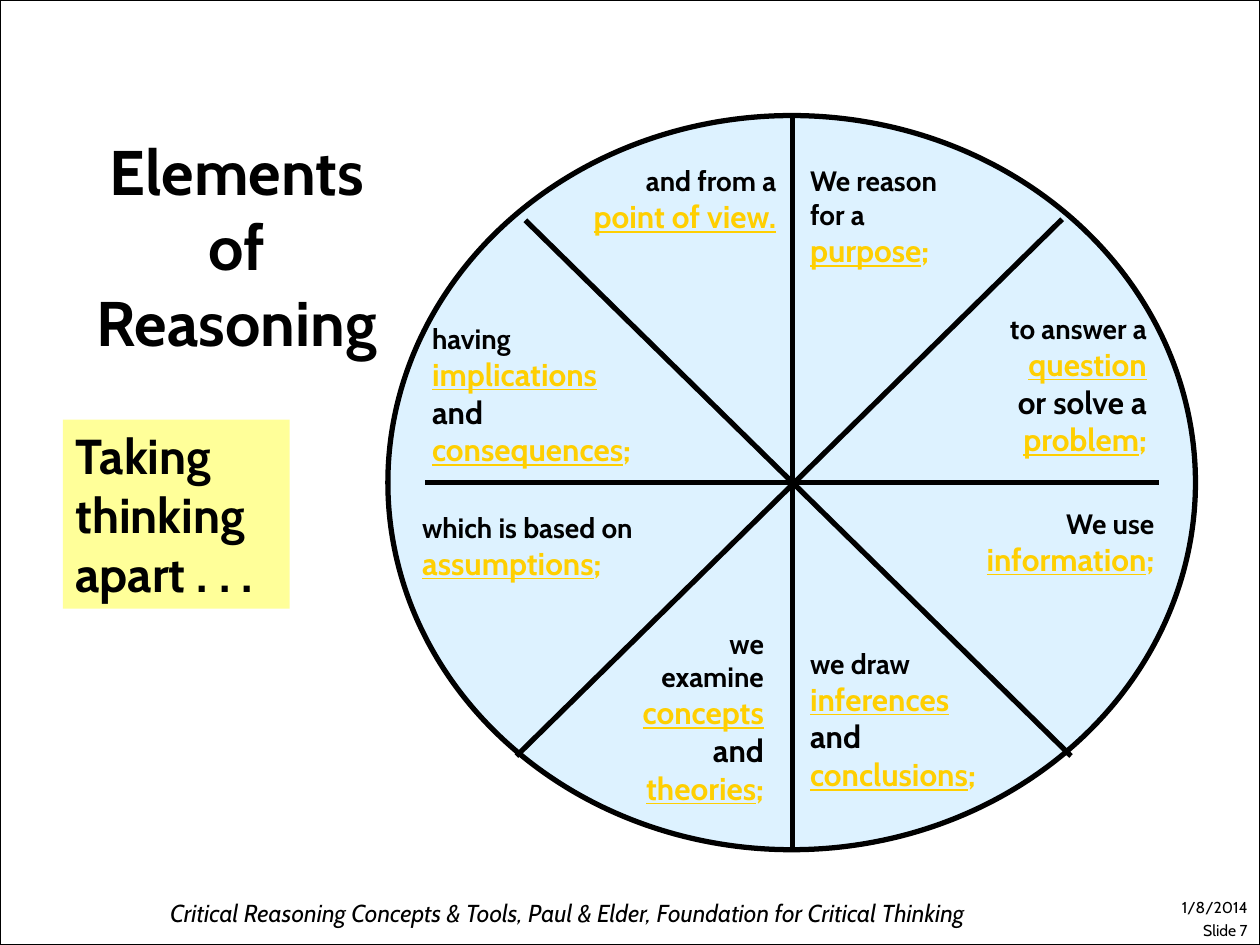
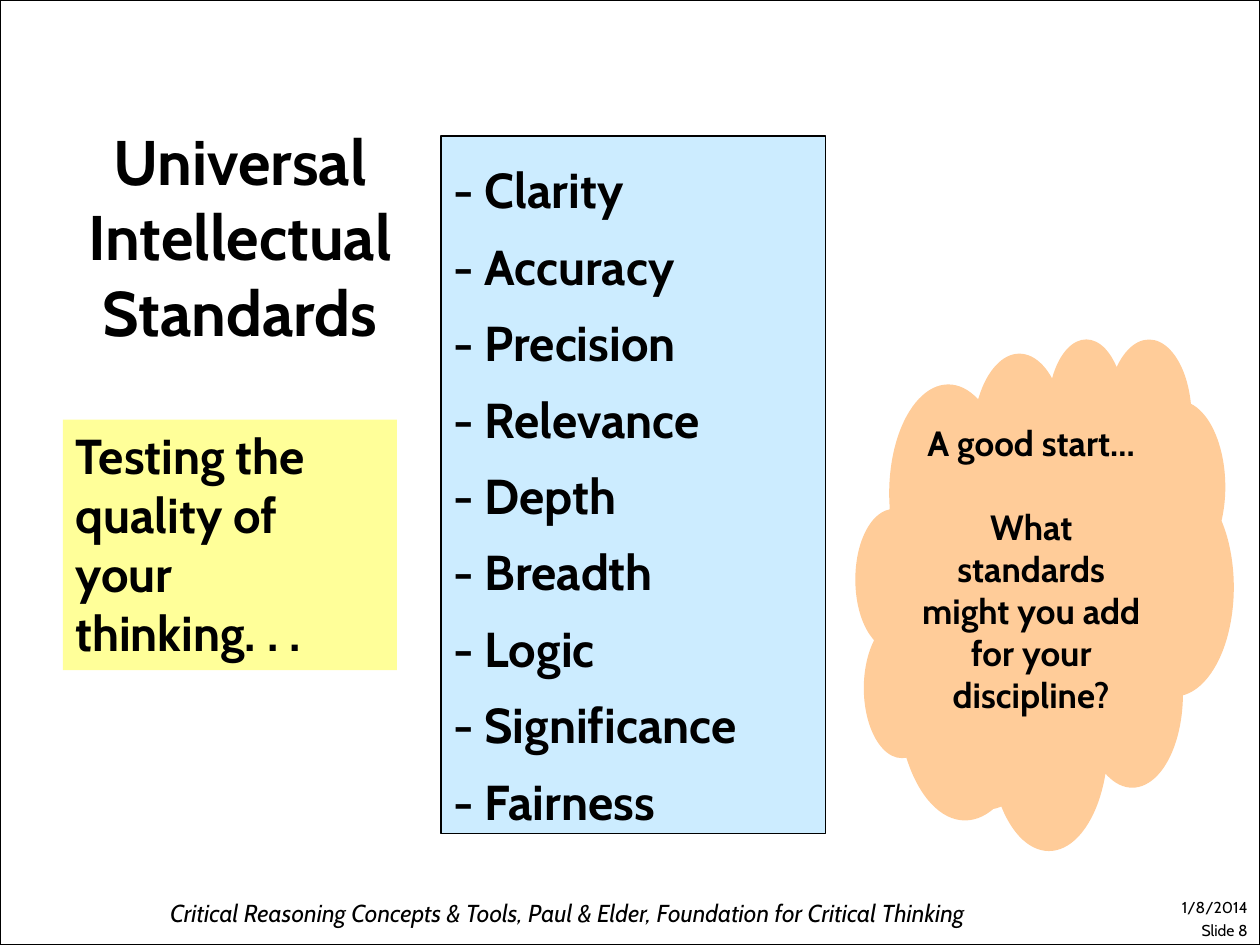
import dataclasses

import pptx
import pptx.dml.color
import pptx.enum.shapes
import pptx.enum.text
import pptx.oxml.ns
import pptx.util
from lxml import etree

Cm = pptx.util.Cm
Pt = pptx.util.Pt
Align = pptx.enum.text.PP_ALIGN
Anchor = pptx.enum.text.MSO_ANCHOR
Preset = pptx.enum.shapes.MSO_SHAPE


@dataclasses.dataclass(frozen=True)
class Theme:
    font: str = "Cabin"
    # Colours
    ink: str = "000000"
    keyword: str = "FFCF01"
    wheel: str = "DDF2FF"
    panel: str = "CCECFF"
    note: str = "FFFF99"
    cloud: str = "FFCC99"
    # Type sizes
    title: int = 36
    large: int = 28
    prompt: int = 20
    key: int = 18
    lead: int = 16
    citation: int = 14
    small: int = 9
    # Line widths
    thin: float = 0.75
    thick: float = 3


PAGE_WIDTH, PAGE_HEIGHT = 25.4, 19.05
CITATION = ("Critical Reasoning Concepts & Tools, Paul & Elder, "
            "Foundation for Critical Thinking")
DATE = "1/8/2014"

# Wheel geometry in centimetres
CENTRE_X, CENTRE_Y = 15.97, 9.73
SPOKE = 7.4
SPOKES = [
    (CENTRE_X, CENTRE_Y - SPOKE, CENTRE_X, CENTRE_Y + SPOKE),
    (CENTRE_X - SPOKE, CENTRE_Y, CENTRE_X + SPOKE, CENTRE_Y),
    (21.41, 4.42, 10.41, 15.24),
    (10.59, 4.44, 21.59, 15.24),
]

# Wheel sectors: place, alignment, lines as (role, text)
SECTORS = [
    ((16.08, 3.18, 3.66, 2.49), Align.LEFT,
     [("lead", "We reason"), ("lead", "for a"), ("key", "purpose;")]),
    ((19.48, 6.15, 3.89, 3.33), Align.RIGHT,
     [("lead", "to answer a"), ("key", "question"),
      ("join", "or solve a"), ("key", "problem;")]),
    ((19.0, 10.08, 4.52, 1.7), Align.RIGHT,
     [("lead", "We use"), ("key", "information;")]),
    ((16.08, 12.9, 4.5, 3.25), Align.LEFT,
     [("lead", "we draw"), ("key", "inferences"),
      ("join", "and"), ("key", "conclusions;")]),
    ((12.27, 12.5, 3.38, 3.94), Align.RIGHT,
     [("lead", "we"), ("lead", "examine"), ("key", "concepts"),
      ("join", "and"), ("key", "theories;")]),
    ((8.26, 10.16, 5.61, 1.7), Align.LEFT,
     [("lead", "which is based on"), ("key", "assumptions;")]),
    ((8.46, 6.35, 5.26, 3.25), Align.LEFT,
     [("lead", "having"), ("key", "implications"),
      ("join", "and"), ("key", "consequences;")]),
    ((11.0, 3.18, 4.9, 1.7), Align.RIGHT,
     [("lead", "and from a"), ("key", "point of view.")]),
]

STANDARDS = ["Clarity", "Accuracy", "Precision", "Relevance", "Depth",
             "Breadth", "Logic", "Significance", "Fairness"]


class SlideBuilder:
    def __init__(self, deck, theme):
        self.deck = deck
        self.theme = theme
        self.page = None

    def new_page(self):
        self.page = self.deck.slides.add_slide(self.deck.slide_layouts[6])

    def colour(self, value):
        return pptx.dml.color.RGBColor.from_string(value)

    def style(self, para, size, colour=None, bold=True, italic=False):
        font = para.font
        font.name = self.theme.font
        font.size = Pt(size)
        font.bold = bold
        font.italic = italic
        font.color.rgb = self.colour(colour or self.theme.ink)

    def paragraphs(self, box, count, align, anchor=Anchor.TOP):
        frame = box.text_frame
        frame.word_wrap = True
        frame.vertical_anchor = anchor
        for _ in range(count - 1):
            frame.add_paragraph()
        for para in frame.paragraphs:
            para.alignment = align
        return frame.paragraphs

    def fill_text(self, box, lines, size, align=Align.LEFT,
                  anchor=Anchor.TOP, **look):
        paras = self.paragraphs(box, len(lines), align, anchor)
        for para, line in zip(paras, lines):
            para.text = line
            self.style(para, size, **look)
        return paras

    def text_box(self, place):
        return self.page.shapes.add_textbox(*map(Cm, place))

    def shape(self, preset, place, fill=None, line_width=None):
        shape = self.page.shapes.add_shape(preset, *map(Cm, place))
        shape.shadow.inherit = False
        if fill:
            shape.fill.solid()
            shape.fill.fore_color.rgb = self.colour(fill)
        else:
            shape.fill.background()
        if line_width:
            shape.line.color.rgb = self.colour(self.theme.ink)
            shape.line.width = Pt(line_width)
        else:
            shape.line.fill.background()
        return shape

    def spoke(self, ends):
        line = self.page.shapes.add_connector(
            pptx.enum.shapes.MSO_CONNECTOR.STRAIGHT, *map(Cm, ends))
        line.line.color.rgb = self.colour(self.theme.ink)
        line.line.width = Pt(self.theme.thick)
        etree.SubElement(line.element.spPr,
                         pptx.oxml.ns.qn("a:effectLst"))

    def sector(self, place, align, lines):
        theme = self.theme
        paras = self.paragraphs(self.text_box(place), len(lines), align)
        for para, (role, text) in zip(paras, lines):
            is_key = role == "key"
            self.style(para, theme.lead if role == "lead" else theme.key,
                       theme.keyword if is_key else theme.ink)
            span = para.add_run()
            span.text = text.rstrip(";")
            if is_key:
                span.font.underline = True
            if text.endswith(";"):
                para.add_run().text = ";"

    def title(self, place, lines):
        self.fill_text(self.text_box(place), lines, self.theme.title,
                       Align.CENTER)

    def note(self, width, height, lines):
        box = self.shape(Preset.RECTANGLE, (1.27, 8.46, width, height),
                         self.theme.note)
        self.fill_text(box, lines, self.theme.large)

    def frame_and_footer(self, number):
        theme = self.theme
        self.shape(Preset.RECTANGLE, (0, 0, PAGE_WIDTH, PAGE_HEIGHT),
                   line_width=theme.thin)
        self.fill_text(self.text_box((3.18, 17.98, 21.59, 0.84)), [CITATION],
                       theme.citation, bold=False, italic=True)
        for top, text in ((17.78, DATE), (18.24, f"Slide {number}")):
            self.fill_text(self.text_box((19.48, top, 5.92, 1.02)), [text],
                           theme.small, Align.RIGHT, Anchor.MIDDLE,
                           bold=False)


def elements_slide(builder):
    theme = builder.theme
    builder.new_page()
    # Wheel
    builder.shape(Preset.OVAL, (7.82, 2.33, 16.28, 2 * SPOKE),
                  theme.wheel, theme.thick)
    for ends in SPOKES:
        builder.spoke(ends)
    for place, align, lines in SECTORS:
        builder.sector(place, align, lines)
    # Title and note
    builder.title((1.27, 2.54, 7.01, 4.83), ["Elements", "of", "Reasoning"])
    builder.note(4.57, 3.81, ["Taking", "thinking", "apart . . ."])
    builder.frame_and_footer(7)


def standards_slide(builder):
    theme = builder.theme
    builder.new_page()
    # Title and note
    builder.title((1.27, 2.34, 7.14, 4.83),
                  ["Universal", "Intellectual", "Standards"])
    builder.note(6.73, 5.05, ["Testing the quality of your thinking. . ."])
    # List of standards
    panel = builder.shape(Preset.RECTANGLE, (8.89, 2.74, 7.75, 14.07),
                          theme.panel, theme.thin)
    names = [f"- {name}" for name in STANDARDS]
    for para in builder.fill_text(panel, names, theme.large):
        para.line_spacing = 1.3
    # Prompt cloud
    cloud = builder.shape(Preset.CLOUD_CALLOUT, (17.25, 6.81, 7.62, 10.31),
                          theme.cloud)
    cloud.adjustments[0] = -0.05
    cloud.adjustments[1] = 0.12
    prompt = builder.fill_text(
        cloud,
        ["A good start…", "What standards might you add for your discipline?"],
        theme.prompt, Align.CENTER)
    prompt[1].space_before = Pt(24)
    builder.frame_and_footer(8)


def main():
    deck = pptx.Presentation()
    deck.slide_width = Cm(PAGE_WIDTH)
    deck.slide_height = Cm(PAGE_HEIGHT)
    builder = SlideBuilder(deck, Theme())
    elements_slide(builder)
    standards_slide(builder)
    deck.save("out.pptx")


if __name__ == "__main__":
    main()
